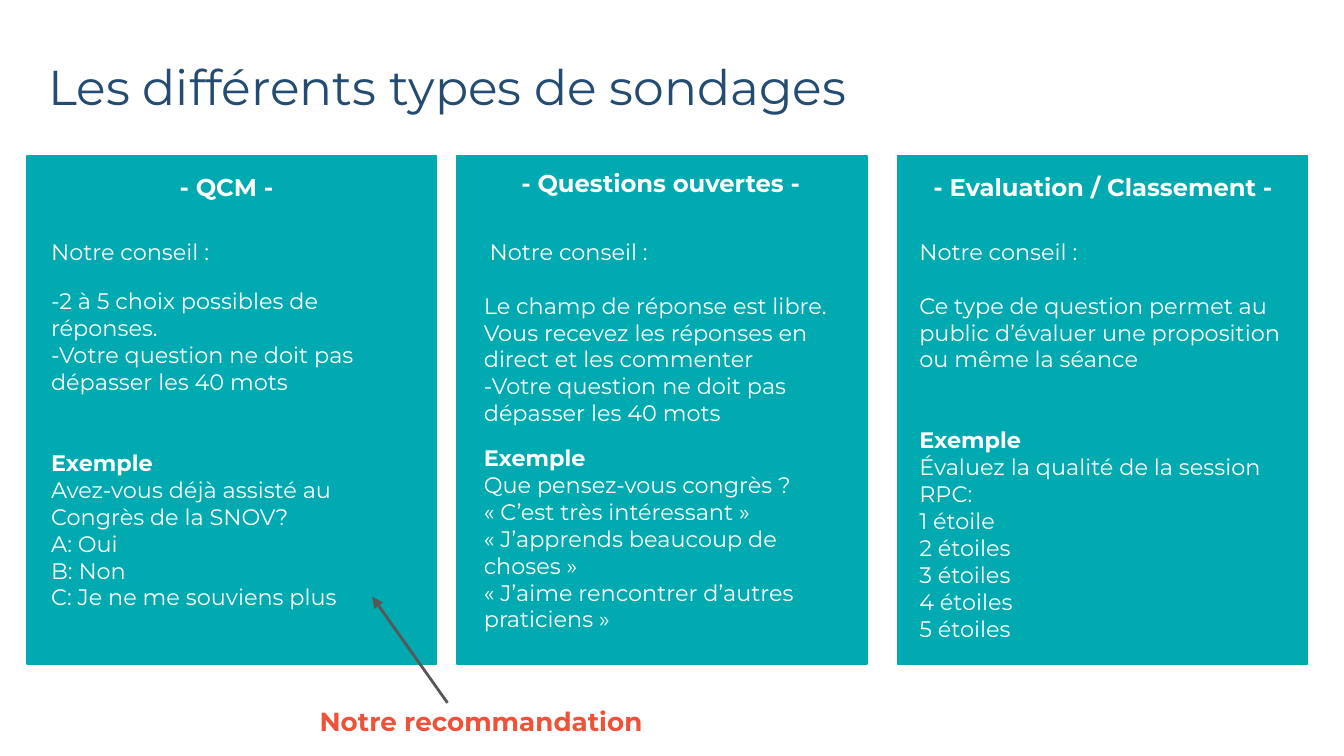
from dataclasses import dataclass

from lxml.etree import SubElement
from pptx import Presentation
from pptx.dml.color import RGBColor
from pptx.enum.shapes import MSO_CONNECTOR, MSO_SHAPE
from pptx.enum.text import MSO_ANCHOR, MSO_AUTO_SIZE, PP_ALIGN
from pptx.oxml.ns import qn
from pptx.util import Inches, Pt

FONT = "Montserrat"
TEAL = "00AAB0"
WHITE = "FFFFFF"
NAVY = "244B71"
ORANGE = "EE5239"
GREY = "585756"
HARD_SPACE = chr(160)


@dataclass(frozen=True)
class Box:
    left: float
    top: float
    width: float
    height: float

    def emu(self) -> tuple:
        return tuple(Inches(v) for v in (self.left, self.top, self.width, self.height))


@dataclass(frozen=True)
class Poll:
    panel_left: float
    heading_box: Box
    heading: str
    body_box: Box
    intro: str
    advice: tuple[str, ...]
    advice_gap: float
    example: tuple[str, ...]
    example_gap: float


def quote(text: str) -> str:
    return HARD_SPACE.join(("«", text, "»"))


POLLS = (
    Poll(
        0.2, Box(0.31, 1.18, 2.75, 0.42), "- QCM -",
        Box(0.38, 1.77, 2.69, 3), "Notre conseil :",
        ("-2 à 5 choix possibles de réponses.",
         "-Votre question ne doit pas dépasser les 40 mots"), 12.2,
        ("Avez-vous déjà assisté au Congrès de la SNOV?",
         "A: Oui", "B: Non", "C: Je ne me souviens plus"), 29,
    ),
    Poll(
        3.4, Box(3.51, 1.15, 2.81, 0.42), "- Questions ouvertes -",
        Box(3.6, 1.77, 2.81, 3), " Notre conseil :",
        ("Le champ de réponse est libre. Vous recevez les réponses en direct et les commenter",
         "-Votre question ne doit pas dépasser les 40 mots"), 14.5,
        ("Que pensez-vous congrès ?", quote("C’est très intéressant"),
         quote("J’apprends beaucoup de choses"),
         quote("J’aime rencontrer d’autres praticiens")), 9.7,
    ),
    Poll(
        6.68, Box(6.8, 1.18, 2.81, 0.42), "- Evaluation / Classement -",
        Box(6.84, 1.77, 2.81, 3), "Notre conseil :",
        ("Ce type de question permet au public d’évaluer une proposition ou même la séance",), 14.5,
        ("Évaluez la qualité de la session RPC:", "1 étoile",
         *(f"{n} étoiles" for n in range(2, 6))), 29,
    ),
)


def rgb(color: str) -> RGBColor:
    return RGBColor.from_string(color)


def set_frame(tf, inset: float, anchor=MSO_ANCHOR.TOP) -> None:
    tf.word_wrap = True
    tf.auto_size = MSO_AUTO_SIZE.NONE
    tf.vertical_anchor = anchor
    tf.margin_left = tf.margin_right = tf.margin_top = tf.margin_bottom = Inches(inset)


def add_run(p, text: str, size: float, color: str, bold: bool = False) -> None:
    r = p.add_run()
    r.text = text
    r.font.name = FONT
    r.font.size = Pt(size)
    r.font.bold = bold
    r.font.color.rgb = rgb(color)


def add_rect(s, box: Box, outlined: bool = False):
    sp = s.shapes.add_shape(MSO_SHAPE.RECTANGLE, *box.emu())
    sp.shadow.inherit = False
    sp.fill.solid()
    sp.fill.fore_color.rgb = rgb(TEAL)
    if outlined:
        sp.line.color.rgb = rgb(TEAL)
        sp.line.width = Pt(0.75)
    else:
        sp.line.fill.background()
    return sp


def add_label(s, box: Box, text: str, size: float, color: str, align=PP_ALIGN.LEFT) -> None:
    tf = s.shapes.add_textbox(*box.emu()).text_frame
    set_frame(tf, 0.1)
    tf.auto_size = MSO_AUTO_SIZE.SHAPE_TO_FIT_TEXT
    p = tf.paragraphs[0]
    p.alignment = align
    add_run(p, text, size, color, True)


def add_body(s, poll: Poll) -> None:
    tf = add_rect(s, poll.body_box).text_frame
    set_frame(tf, 0)
    gaps = {1: poll.advice_gap, 1 + len(poll.advice): poll.example_gap}
    lines = (poll.intro, *poll.advice, "Exemple", *poll.example)
    for i, text in enumerate(lines):
        p = tf.add_paragraph() if i else tf.paragraphs[0]
        p.alignment = PP_ALIGN.LEFT
        p.space_before = Pt(gaps.get(i, 0))
        add_run(p, text, 12, WHITE, text == "Exemple")


def add_title(s, text: str) -> None:
    sp = s.shapes.title
    sp.left, sp.top, sp.width, sp.height = Box(0.26, 0.33, 9.32, 0.63).emu()
    set_frame(sp.text_frame, 0.1, MSO_ANCHOR.BOTTOM)
    p = sp.text_frame.paragraphs[0]
    p.alignment = PP_ALIGN.LEFT
    add_run(p, text, 26.2, NAVY)


def add_arrow(s, start: tuple[float, float], end: tuple[float, float]) -> None:
    points = (Inches(v) for v in (*start, *end))
    cx = s.shapes.add_connector(MSO_CONNECTOR.STRAIGHT, *points)
    cx.line.color.rgb = rgb(GREY)
    cx.line.width = Pt(1.5)
    props = cx._element.spPr
    SubElement(props.find(qn("a:ln")), qn("a:tailEnd"), type="triangle")
    SubElement(props, qn("a:effectLst"))


def main() -> None:
    prs = Presentation()
    prs.slide_width = Inches(10)
    prs.slide_height = prs.slide_width * 9 // 16
    s = prs.slides.add_slide(prs.slide_layouts[5])
    add_title(s, "Les différents types de sondages")
    for poll in POLLS:
        add_rect(s, Box(poll.panel_left, 1.16, 3.05, 3.78), outlined=True)
        add_body(s, poll)
        add_label(s, poll.heading_box, poll.heading, 13, WHITE, PP_ALIGN.CENTER)
    add_arrow(s, (3.33, 5.23), (2.77, 4.44))
    add_label(s, Box(2.28, 5.15, 4.66, 0.44), "Notre recommandation", 14, ORANGE)
    prs.save("out.pptx")


if __name__ == "__main__":
    main()
